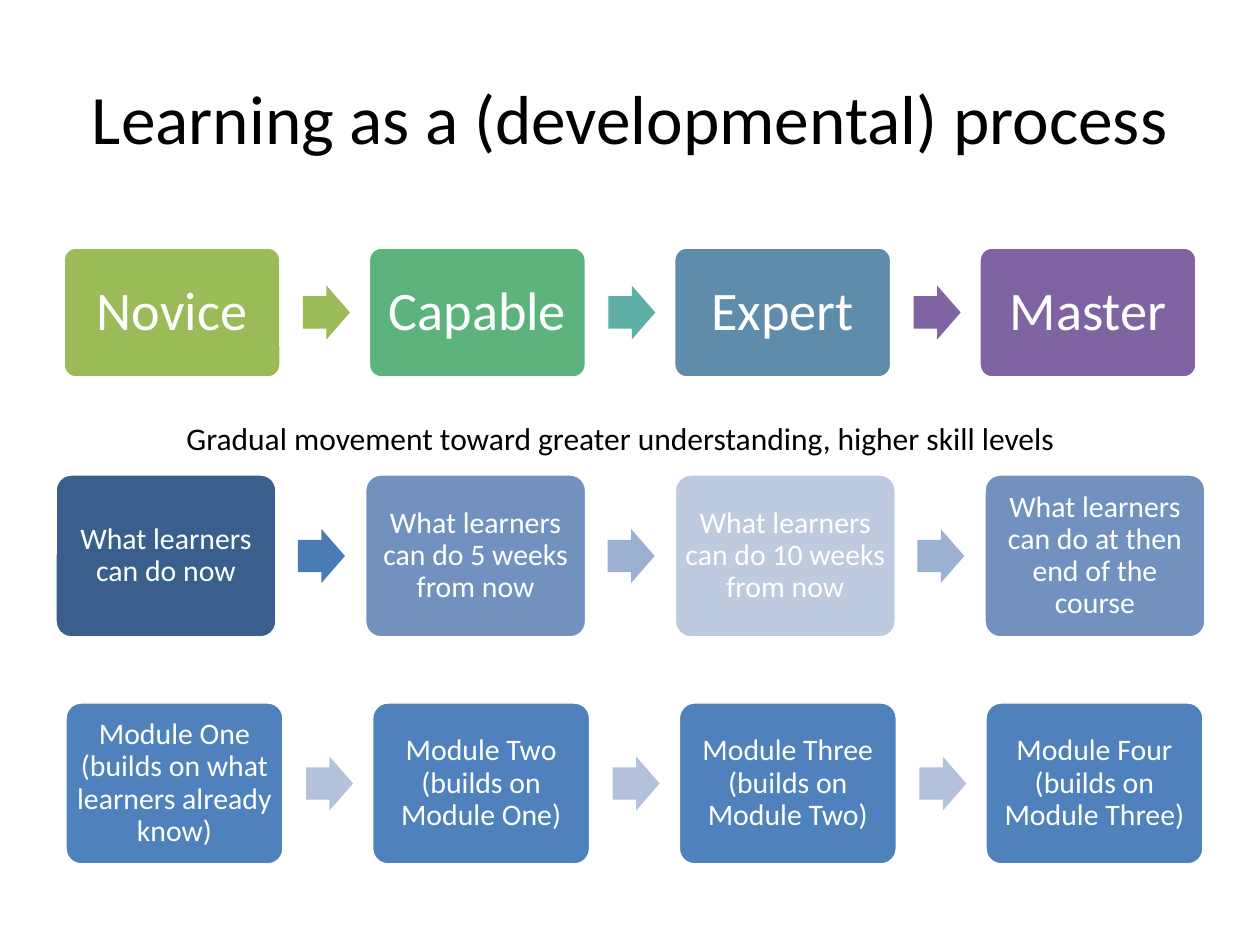
from pptx import Presentation
from pptx import util as u
from pptx.dml.color import RGBColor
from pptx.enum import shapes, text

PX = u.Inches(1) / 126
FONT = "Calibri"
WHITE = RGBColor(0xFF, 0xFF, 0xFF)
BLACK = RGBColor(0x00, 0x00, 0x00)
LIME = RGBColor(0x9B, 0xBB, 0x59)
GREEN = RGBColor(0x5C, 0xB3, 0x7C)
TEAL = RGBColor(0x5E, 0xAF, 0xA6)
STEEL = RGBColor(0x60, 0x8C, 0xAB)
PURPLE = RGBColor(0x80, 0x64, 0xA2)
NAVY = RGBColor(0x3A, 0x5F, 0x8C)
ROYAL = RGBColor(0x4B, 0x7B, 0xB5)
BLUE = RGBColor(0x4F, 0x81, 0xBD)
MID_BLUE = RGBColor(0x73, 0x91, 0xBF)
SOFT_BLUE = RGBColor(0x9C, 0xB1, 0xD1)
PALE_BLUE = RGBColor(0xBE, 0xCA, 0xDF)
MIST = RGBColor(0xB3, 0xC1, 0xDB)


def px(*lengths):
    """Turn pixel lengths into EMU."""
    return [round(length * PX) for length in lengths]


def write(frame, wording, size, color, align):
    frame.text = wording
    paragraph = frame.paragraphs[0]
    paragraph.alignment = align
    font = paragraph.runs[0].font
    font.name, font.size, font.color.rgb = FONT, u.Pt(size), color
    return paragraph


prs = Presentation()
prs.slide_width, prs.slide_height = px(1260, 945)
slide = prs.slides.add_slide(prs.slide_layouts[5])

title = slide.shapes.title
title.left, title.top, title.width, title.height = px(63, 38, 1134, 157)
title.text_frame.vertical_anchor = text.MSO_ANCHOR.MIDDLE
write(title.text_frame, "Learning as a (developmental) process", 39.6, BLACK,
      text.PP_ALIGN.CENTER)

caption = slide.shapes.add_textbox(*px(174, 413, 915, 51)).text_frame
caption.word_wrap = False
write(caption, "Gradual movement toward greater understanding, higher skill levels",
      18, BLACK, text.PP_ALIGN.LEFT)

# first left, last left, top, step width, step height, arrow offset, inset, text size,
# then the steps with their fills and the arrow fills
processes = [
    (63, 979, 247, 218, 131, 240, 12, 31,
     [("Novice", LIME), ("Capable", GREEN), ("Expert", STEEL), ("Master", PURPLE)],
     [LIME, TEAL, PURPLE]),
    (55, 984, 474, 222, 164, 243, 4, 17,
     [("What learners can do now", NAVY),
      ("What learners can do 5 weeks from now", MID_BLUE),
      ("What learners can do 10 weeks from now", PALE_BLUE),
      ("What learners can do at then end of the course", MID_BLUE)],
     [ROYAL, SOFT_BLUE, SOFT_BLUE]),
    (65, 985, 702, 219, 163, 241, 4, 17,
     [("Module One (builds on what learners already know)", BLUE),
      ("Module Two (builds on Module One)", BLUE),
      ("Module Three (builds on Module Two)", BLUE),
      ("Module Four (builds on Module Three)", BLUE)],
     [MIST] * 3),
]
ARROW_WIDTH, ARROW_HEIGHT = 47, 54

for first, last, top, width, height, offset, inset, size, steps, arrow_fills in processes:
    pitch = (last - first) / (len(steps) - 1)

    for i, (wording, fill) in enumerate(steps):
        step = slide.shapes.add_shape(shapes.MSO_SHAPE.ROUNDED_RECTANGLE,
                                      *px(first + i * pitch, top, width, height))
        step.adjustments[0] = 0.1
        step.shadow.inherit = False
        step.fill.solid()
        step.fill.fore_color.rgb = fill
        step.line.color.rgb = WHITE
        step.line.width = u.Pt(2)
        frame = step.text_frame
        frame.word_wrap = True
        frame.vertical_anchor = text.MSO_ANCHOR.MIDDLE
        (frame.margin_left, frame.margin_right,
         frame.margin_top, frame.margin_bottom) = px(*[inset] * 4)
        write(frame, wording, size, WHITE, text.PP_ALIGN.CENTER).line_spacing = 0.9

    for i, fill in enumerate(arrow_fills):
        arrow = slide.shapes.add_shape(
            shapes.MSO_SHAPE.RIGHT_ARROW,
            *px(first + i * pitch + offset, top + (height - ARROW_HEIGHT) / 2,
                ARROW_WIDTH, ARROW_HEIGHT))
        arrow.adjustments[0] = 0.6
        arrow.adjustments[1] = 0.5
        arrow.shadow.inherit = False
        arrow.fill.solid()
        arrow.fill.fore_color.rgb = fill
        arrow.line.fill.background()

prs.save("out.pptx")
